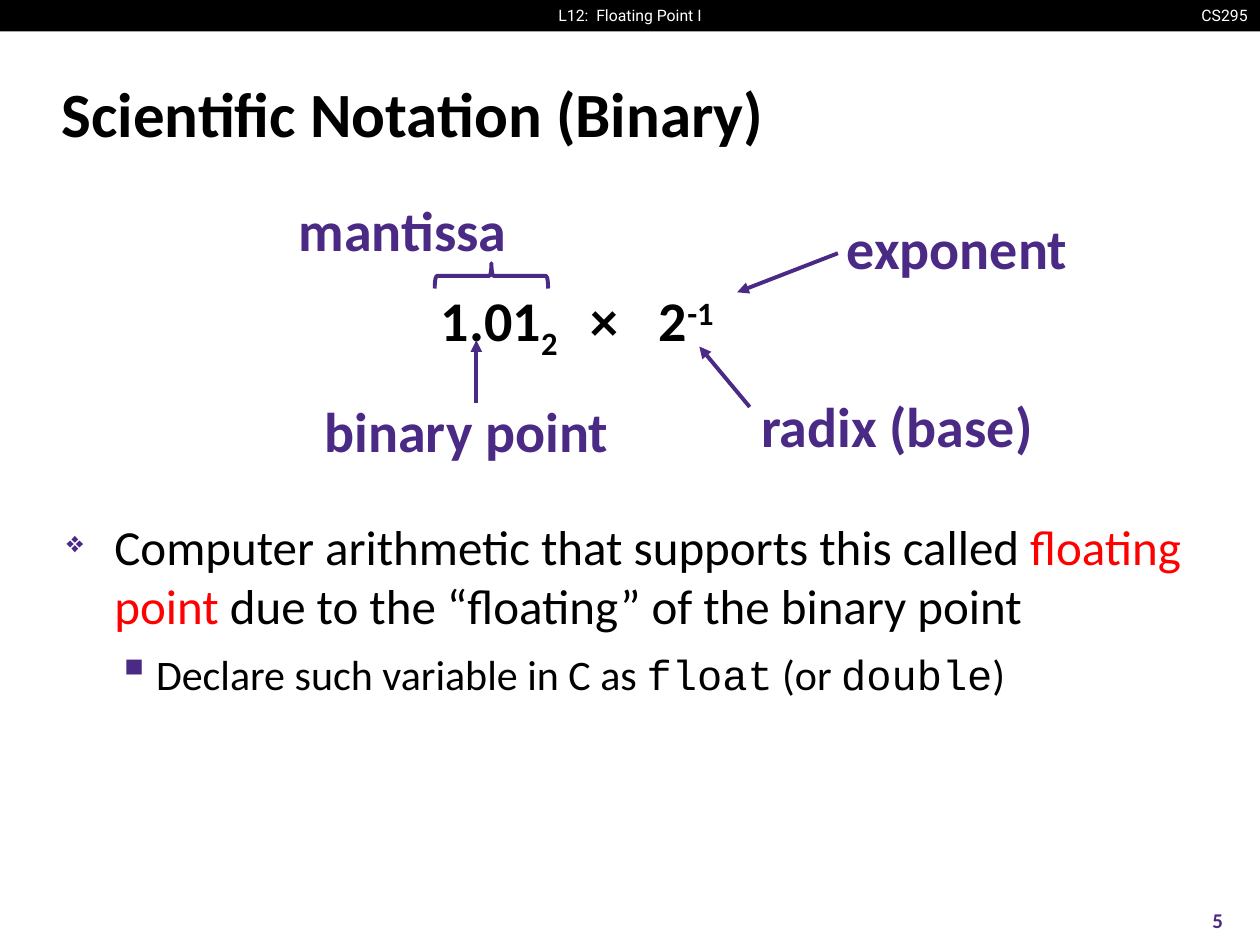
from dataclasses import dataclass

from lxml.etree import SubElement
from pptx import Presentation
from pptx.dml.color import RGBColor
from pptx.enum.shapes import MSO_CONNECTOR as Connector, MSO_SHAPE as Shape
from pptx.enum.text import MSO_ANCHOR as Anchor, PP_ALIGN as Align
from pptx.oxml.ns import qn
from pptx.util import Inches, Pt


@dataclass(frozen=True)
class Theme:
    black: str = "000000"
    white: str = "FFFFFF"
    accent: str = "4B2A85"
    highlight: str = "FF0000"
    font: str = "Calibri"
    header_font: str = "Roboto"
    code_font: str = "Courier New"
    header: int = 9
    number: int = 12
    detail: int = 24
    body: int = 28
    label: int = 32
    title: int = 36
    line: float = 2.25


class SlideBuilder:
    COLUMNS, ROWS = 40, 30

    def __init__(self, presentation, theme):
        self.theme = theme
        self.column = presentation.slide_width / self.COLUMNS
        self.row = presentation.slide_height / self.ROWS
        self.slide = presentation.slides.add_slide(presentation.slide_layouts[6])
        self.shapes = self.slide.shapes

    def place(self, *cells):
        units = (self.column, self.row) * 2
        return [round(cell * unit) for cell, unit in zip(cells, units)]

    def bar(self, *cells):
        shape = self.shapes.add_shape(Shape.RECTANGLE, *self.place(*cells))
        shape.shadow.inherit = False
        shape.fill.solid()
        shape.fill.fore_color.rgb = RGBColor.from_string(self.theme.black)
        shape.line.fill.background()

    def box(self, cells, anchor=Anchor.TOP, wrap=True, inset=(0.1, 0.05)):
        shape = self.shapes.add_textbox(*self.place(*cells))
        frame = shape.text_frame
        frame.word_wrap = wrap
        frame.vertical_anchor = anchor
        frame.margin_left = frame.margin_right = Inches(inset[0])
        frame.margin_top = frame.margin_bottom = Inches(inset[1])
        return shape

    def add_runs(self, paragraph, runs, size, color=None, font=None,
                 bold=False, align=Align.LEFT):
        paragraph.alignment = align
        style = paragraph.font
        style.size, style.bold = Pt(size), bold
        style.name = font or self.theme.font
        style.color.rgb = RGBColor.from_string(color or self.theme.black)
        for text, change in runs:
            run = paragraph.add_run()
            run.text = text
            if "font" in change:
                run.font.name = change["font"]
            if "color" in change:
                run.font.color.rgb = RGBColor.from_string(change["color"])
            if "baseline" in change:
                run._r.get_or_add_rPr().set("baseline", str(change["baseline"] * 1000))

    def text(self, cells, text, size, anchor=Anchor.TOP, wrap=True, **style):
        shape = self.box(cells, anchor, wrap)
        self.add_runs(shape.text_frame.paragraphs[0], [(text, {})], size, **style)

    def label(self, cells, runs, color, align=Align.LEFT, tabs=()):
        shape = self.box(cells, wrap=bool(tabs), inset=(0.07, 0.03))
        paragraph = shape.text_frame.paragraphs[0]
        paragraph.line_spacing = 0.85
        if tabs:
            tab_list = SubElement(paragraph._p.get_or_add_pPr(), qn("a:tabLst"))
            for position in tabs:
                SubElement(tab_list, qn("a:tab"), pos=str(Inches(position)), algn="l")
        self.add_runs(paragraph, runs, self.theme.label, color, bold=True, align=align)
        return shape

    def bullet(self, paragraph, symbol, percent, margin, hanging, runs, size):
        properties = paragraph._p.get_or_add_pPr()
        properties.set("marL", str(Inches(margin)))
        properties.set("indent", str(-Inches(hanging)))
        color = SubElement(properties, qn("a:buClr"))
        SubElement(color, qn("a:srgbClr"), val=self.theme.accent)
        SubElement(properties, qn("a:buSzPct"), val=str(percent * 1000))
        SubElement(properties, qn("a:buChar"), char=symbol)
        self.add_runs(paragraph, runs, size)

    def outline(self, shape):
        shape.line.color.rgb = RGBColor.from_string(self.theme.accent)
        shape.line.width = Pt(self.theme.line)

    def pointer(self, target, start, label=None):
        connector = self.shapes.add_connector(
            Connector.STRAIGHT, *self.place(*target, *start))
        if label is not None:
            connector.end_connect(label, 1)
        self.outline(connector)
        properties = connector._element.spPr
        SubElement(properties.find(qn("a:ln")), qn("a:headEnd"), type="triangle")
        SubElement(properties, qn("a:effectLst"))

    def brace(self, *cells):
        shape = self.shapes.add_shape(Shape.LEFT_BRACE, *self.place(*cells))
        shape.rotation = 90
        shape.shadow.inherit = False
        shape.fill.background()
        self.outline(shape)


def main():
    presentation = Presentation()
    presentation.slide_width, presentation.slide_height = Inches(10), Inches(7.5)
    theme = Theme()
    builder = SlideBuilder(presentation, theme)

    builder.bar(0, 0, 40, 1)
    header = dict(size=theme.header, color=theme.white,
                  font=theme.header_font, wrap=False)
    builder.text((37.64, 0, 2.36, 1), "CS295", align=Align.RIGHT, **header)
    builder.text((16.28, 0, 7.44, 1), "L12:  Floating Point I",
                 align=Align.CENTER, **header)
    builder.text((1.56, 1.92, 36.76, 3.32), "Scientific Notation (Binary)",
                 theme.title, anchor=Anchor.MIDDLE, bold=True)

    body = builder.box((1.72, 16.2, 36.6, 11.5)).text_frame
    builder.bullet(body.paragraphs[0], "❖", 60, 0.38, 0.38, [
        ("Computer arithmetic that supports this called ", {}),
        ("floating point", {"color": theme.highlight}),
        (" due to the “floating” of the binary point", {}),
    ], theme.body)
    detail = body.add_paragraph()
    detail.level = 1
    detail.line_spacing = 0.7
    detail.space_before = Pt(16)
    code = {"font": theme.code_font}
    builder.bullet(detail, "▪", 110, 0.71, 0.31, [
        ("Declare such variable in C as ", {}), ("float", code),
        (" (or ", {}), ("double", code), (")", {}),
    ], theme.detail)

    builder.text((37.32, 28.4, 2.68, 1.6), "5", theme.number, anchor=Anchor.MIDDLE,
                 color=theme.accent, bold=True, align=Align.CENTER)

    builder.label((13.72, 9.08, 9.6, 2.04), [
        ("1.01", {}), ("2", {"baseline": -25}),
        ("\t×\t2", {}), ("-1", {"baseline": 30}),
    ], theme.black, tabs=(1.19, 1.73))
    labels = {
        text: builder.label(cells, [(text, {})], theme.accent, align)
        for text, cells, align in [
            ("radix (base)", (23.88, 12.64, 9.28, 2.08), Align.LEFT),
            ("binary point", (9.96, 12.8, 9.64, 2.08), Align.RIGHT),
            ("exponent", (26.6, 7, 7.64, 2.08), Align.LEFT),
            ("mantissa", (9.2, 6.4, 7.24, 2.08), Align.LEFT),
        ]
    }
    builder.pointer((22.2, 11), (23.8, 12.92))
    builder.pointer((15.12, 10.8), (15.12, 12.8))
    builder.pointer((23.4, 9.28), (26.6, 8.04), labels["exponent"])
    builder.brace(15.2, 6.96, 0.8, 3.6)

    presentation.save("out.pptx")


if __name__ == "__main__":
    main()
